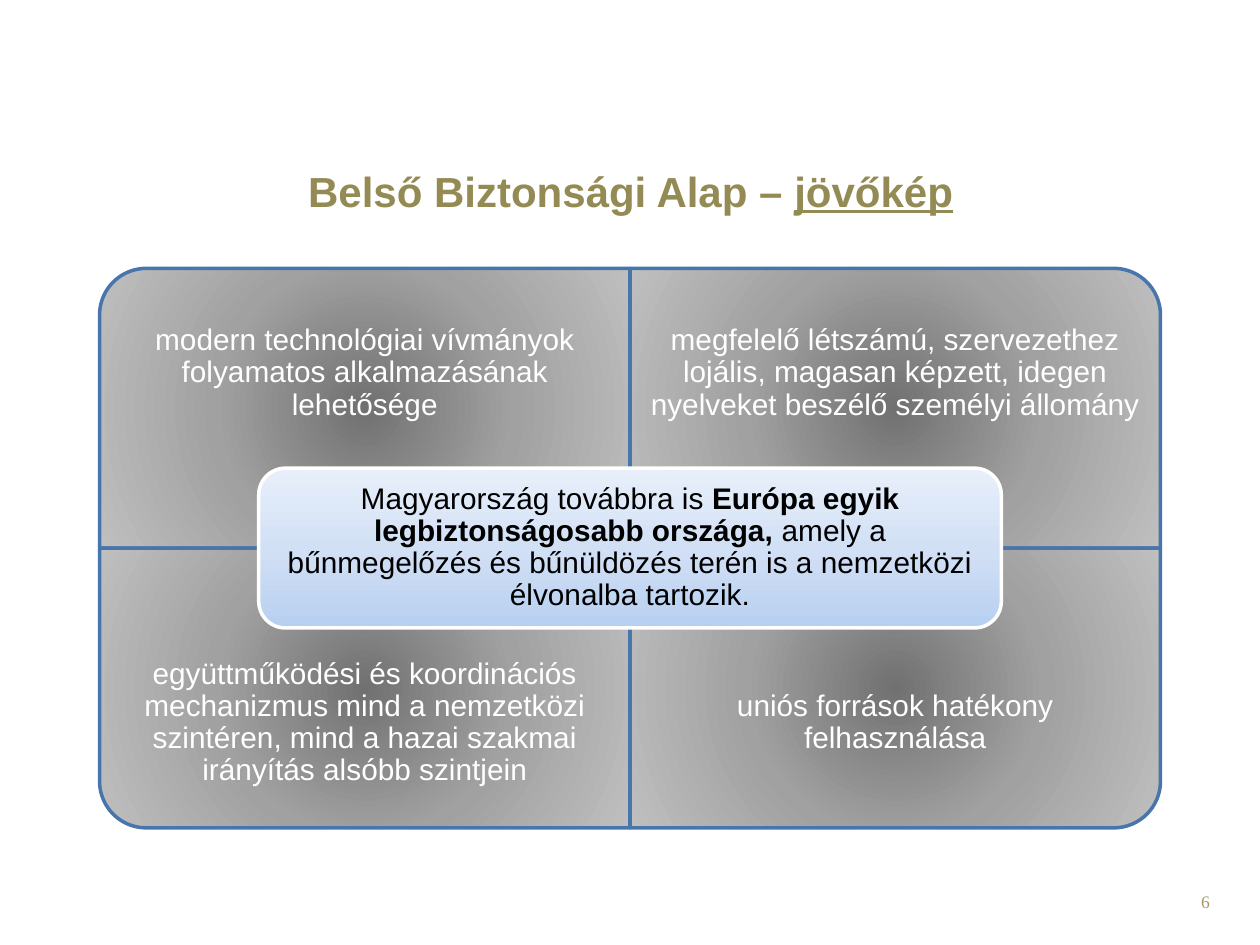
from lxml import etree
from pptx import Presentation
from pptx import util as u
from pptx.dml.color import RGBColor
from pptx.enum import shapes, text
from pptx.oxml import ns

COLS, ROWS = 100, 75
UNIT = u.Inches(10) // COLS
HUES = {
    "gold": "948A54", "page": "A69765", "edge": "4875AC",
    "white": "FFFFFF", "black": "000000",
}
GREYS = ["717171", "A1A1A1", "BFBFBF"]
BLUES = ["B7D0F1", "D2E0F5", "E8EFFA"]
RADIAL = ("path", {"path": "circle"})
UPWARD = ("lin", {"ang": "16200000", "scaled": "0"})
GOALS = [
    (0, 0, 270, "modern technológiai vívmányok folyamatos alkalmazásának lehetősége"),
    (1, 0, 0, "megfelelő létszámú, szervezethez lojális, magasan képzett, "
              "idegen nyelveket beszélő személyi állomány"),
    (0, 1, 180, "együttműködési és koordinációs mechanizmus mind a nemzetközi "
                "szintéren, mind a hazai szakmai irányítás alsóbb szintjein"),
    (1, 1, 90, "uniós források hatékony felhasználása"),
]
VISION = [
    ("Magyarország továbbra is ", ""),
    ("Európa egyik legbiztonságosabb országa, ", "b"),
    ("amely a bűnmegelőzés és bűnüldözés terén is a nemzetközi élvonalba tartozik.", ""),
]


def place(box):
    """Turn a box in columns and rows into slide lengths."""
    return [round(n * UNIT) for n in box]


def write(shape, runs, size=17, font="Arial", hue="white", align="CENTER",
          anchor="MIDDLE", pad=None, lead=None, after=None):
    """Fill a shape with one paragraph of (words, marks) runs."""
    frame = shape.text_frame
    frame.word_wrap = True
    frame.vertical_anchor = text.MSO_ANCHOR[anchor]
    if pad is not None:
        frame.margin_left = frame.margin_right = u.Inches(pad)
        frame.margin_top = frame.margin_bottom = u.Inches(pad)
    para = frame.paragraphs[0]
    para.alignment = text.PP_ALIGN[align]
    para.line_spacing = lead
    para.space_after = after
    for words, marks in runs:
        run = para.add_run()
        run.text = words
        run.font.name, run.font.size = font, u.Pt(size)
        run.font.bold, run.font.underline = "b" in marks, "u" in marks
        run.font.color.rgb = RGBColor.from_string(HUES[hue])


def shade(shape, tones, mode):
    """Give a shape an evenly stepped gradient, radial or linear."""
    shape.fill.background()
    grad = etree.Element(ns.qn("a:gradFill"), rotWithShape="1")
    stops = etree.SubElement(grad, ns.qn("a:gsLst"))
    for i, tone in enumerate(tones):
        stop = etree.SubElement(stops, ns.qn("a:gs"), pos=str(i * 50000))
        etree.SubElement(stop, ns.qn("a:srgbClr"), val=tone)
    tag, attrs = mode
    way = etree.SubElement(grad, ns.qn(f"a:{tag}"), attrs)
    if tag == "path":
        etree.SubElement(way, ns.qn("a:fillToRect"),
                         {side: "50000" for side in "ltrb"})
    props = shape.element.spPr
    props.replace(props.find(ns.qn("a:noFill")), grad)


def panel(slide, kind, box, tones, mode, edge):
    """Add an outlined gradient shape."""
    shape = slide.shapes.add_shape(shapes.MSO_SHAPE[kind], *place(box))
    shape.shadow.inherit = False
    shade(shape, tones, mode)
    shape.line.color.rgb = RGBColor.from_string(HUES[edge])
    shape.line.width = u.Pt(2)
    return shape


def label(slide, box, runs, **style):
    """Add a text box."""
    write(slide.shapes.add_textbox(*place(box)), runs, **style)


def goal(slide, box, turn, words, low):
    """Draw one quarter, its round corner turned outward, and its words."""
    x, y, w, h = box
    pw, ph = (h, w) if turn % 180 else (w, h)
    shape = panel(slide, "ROUND_1_RECTANGLE",
                  (x + (w - pw) / 2, y + (h - ph) / 2, pw, ph),
                  GREYS, RADIAL, "edge")
    shape.rotation = turn
    label(slide, (x, y + low * h / 4, w, h * 3 / 4), [(words, "")],
          pad=0.13, lead=0.9, after=u.Pt(6))


def matrix(slide, box):
    """Draw four goals around a central vision."""
    x, y, w, h = box
    cw, ch = w / 2, h / 2
    for col, row, turn, words in GOALS:
        goal(slide, (x + col * cw, y + row * ch, cw, ch), turn, words, row)
    mw, mh = w * 0.7, h * 2 / 7
    core = panel(slide, "ROUNDED_RECTANGLE",
                 (x + (w - mw) / 2, y + (h - mh) / 2, mw, mh),
                 BLUES, UPWARD, "white")
    write(core, VISION, hue="black", pad=0.07, lead=0.9, after=u.Pt(6))


def main():
    """Build and save the slide."""
    deck = Presentation()
    deck.slide_width, deck.slide_height = COLS * UNIT, ROWS * UNIT
    slide = deck.slides.add_slide(deck.slide_layouts[6])
    label(slide, (73.7, 70.2, 23.3, 4), [("6", "")], size=10,
          font="Times New Roman", hue="page", align="RIGHT", anchor="TOP")
    label(slide, (7.9, 13.1, 84.3, 4.7),
          [("Belső Biztonsági Alap – ", "b"), ("jövőkép", "bu")],
          size=24, hue="gold", anchor="TOP", pad=0)
    matrix(slide, (7.9, 21.3, 84.2, 44.4))
    deck.save("out.pptx")


if __name__ == "__main__":
    main()
